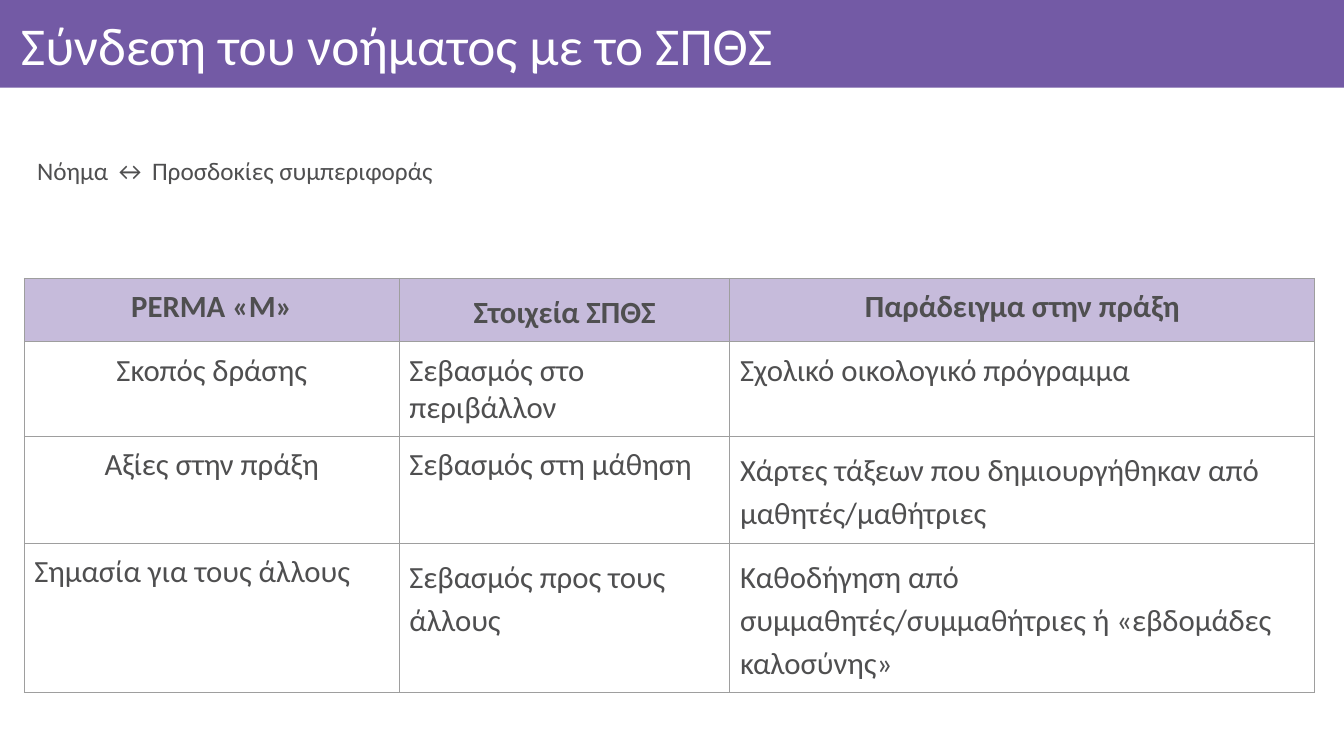
from lxml.etree import SubElement
from pptx import Presentation
from pptx.dml.color import RGBColor
from pptx.enum.shapes import MSO_SHAPE
from pptx.enum.text import MSO_ANCHOR, PP_ALIGN
from pptx.oxml.ns import qn
from pptx.util import Inches, Pt

PURPLE = RGBColor(0x73, 0x5A, 0xA5)
LILAC = RGBColor(0xC6, 0xBB, 0xDB)
WHITE = RGBColor(0xFF, 0xFF, 0xFF)
INK = RGBColor(0x4F, 0x4F, 0x50)
GRID = RGBColor(0x9E, 0x9E, 0x9E)

COLUMN_WIDTHS = [3.72, 3.28, 5.8]
ROW_HEIGHTS = [0.63, 0.94, 1.06, 1.48]
ROWS = [
    ["PERMA «M»", "Στοιχεία ΣΠΘΣ", "Παράδειγμα στην πράξη"],
    ["Σκοπός δράσης", "Σεβασμός στο περιβάλλον", "Σχολικό οικολογικό πρόγραμμα"],
    ["Αξίες στην πράξη", "Σεβασμός στη μάθηση",
     "Χάρτες τάξεων που δημιουργήθηκαν από μαθητές/μαθήτριες"],
    ["Σημασία για τους άλλους", "Σεβασμός προς τους άλλους",
     "Καθοδήγηση από συμμαθητές/συμμαθήτριες ή «εβδομάδες καλοσύνης»"],
]
CENTRED = {(0, 0), (0, 1), (0, 2), (1, 0), (2, 0)}
LOOSE = {(0, 1), (2, 2), (3, 1), (3, 2)}


def apply(target, values):
    for name, value in values.items():
        setattr(target, name, value)


def write(frame, text, size, color, bold=False, **para_format):
    para = frame.paragraphs[0]
    apply(para, para_format)
    span = para.add_run()
    span.text = text
    apply(span.font, {"name": "Calibri", "size": Pt(size), "bold": bold})
    span.font.color.rgb = color


def add_text(page, box, text, size, color, margins, anchor, **para_format):
    frame = page.shapes.add_textbox(*map(Inches, box)).text_frame
    sides = ("margin_left", "margin_top", "margin_right", "margin_bottom")
    apply(frame, dict(zip(sides, map(Inches, margins))))
    apply(frame, {"word_wrap": True, "vertical_anchor": anchor})
    write(frame, text, size, color, **para_format)


def add_title(page, box):
    left, top, width, height = box
    band = page.shapes.add_shape(MSO_SHAPE.RECTANGLE, *map(Inches, box))
    band.shadow.inherit = False
    band.fill.solid()
    band.fill.fore_color.rgb = PURPLE
    band.line.fill.background()
    add_text(page, (left + 0.11, top + 0.09, width - 0.27, height - 0.09),
             "Σύνδεση του νοήματος με το ΣΠΘΣ", 38, WHITE,
             (0.1, 0.06, 0.06, 0.06), MSO_ANCHOR.MIDDLE, line_spacing=0.9)


def add_lead(page, box):
    add_text(page, box, "Νόημα ↔ Προσδοκίες συμπεριφοράς", 18, INK,
             (0.1, 0.05, 0.1, 0.05), MSO_ANCHOR.TOP,
             line_spacing=1.15, space_before=Pt(12))


def add_borders(cell):
    properties = cell._tc.get_or_add_tcPr()
    for position, side in enumerate(("a:lnL", "a:lnR", "a:lnT", "a:lnB")):
        line = SubElement(properties, qn(side), w=str(Pt(0.75)))
        fill = SubElement(line, qn("a:solidFill"))
        SubElement(fill, qn("a:srgbClr"), val=str(GRID))
        properties.insert(position, line)


def add_examples(page, box):
    table = page.shapes.add_table(
        len(ROWS), len(COLUMN_WIDTHS), *map(Inches, box)).table
    for column, width in zip(table.columns, COLUMN_WIDTHS):
        column.width = Inches(width)
    for row, height in zip(table.rows, ROW_HEIGHTS):
        row.height = Inches(height)
    for r, texts in enumerate(ROWS):
        for c, text in enumerate(texts):
            cell = table.cell(r, c)
            for side in ("left", "top", "right", "bottom"):
                setattr(cell, f"margin_{side}", Inches(0.1))
            if r == 0:
                cell.fill.solid()
                cell.fill.fore_color.rgb = LILAC
            else:
                cell.fill.background()
            add_borders(cell)
            write(cell.text_frame, text, 22, INK, bold=r == 0,
                  alignment=PP_ALIGN.CENTER if (r, c) in CENTRED else PP_ALIGN.LEFT,
                  line_spacing=1.15 if (r, c) in LOOSE else 1.0)


def main():
    deck = Presentation()
    apply(deck, {"slide_width": Inches(13.33), "slide_height": Inches(7.5)})
    page = deck.slides.add_slide(deck.slide_layouts[6])
    add_title(page, (0, 0, 13.33, 0.87))
    add_lead(page, (0.27, 1.45, 13.06, 3.88))
    add_examples(page, (0.24, 2.76, sum(COLUMN_WIDTHS), sum(ROW_HEIGHTS)))
    deck.save("out.pptx")


if __name__ == "__main__":
    main()
